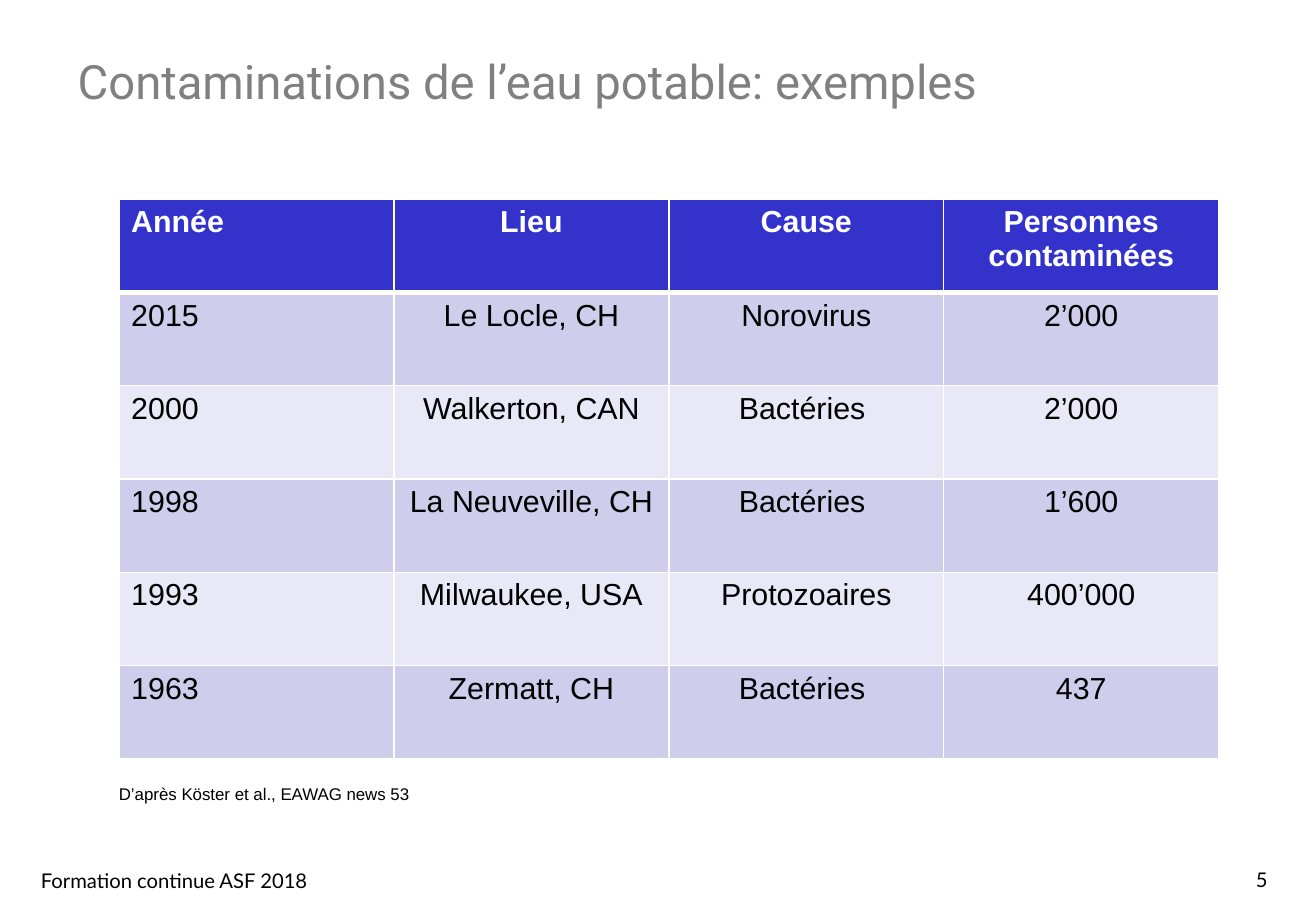
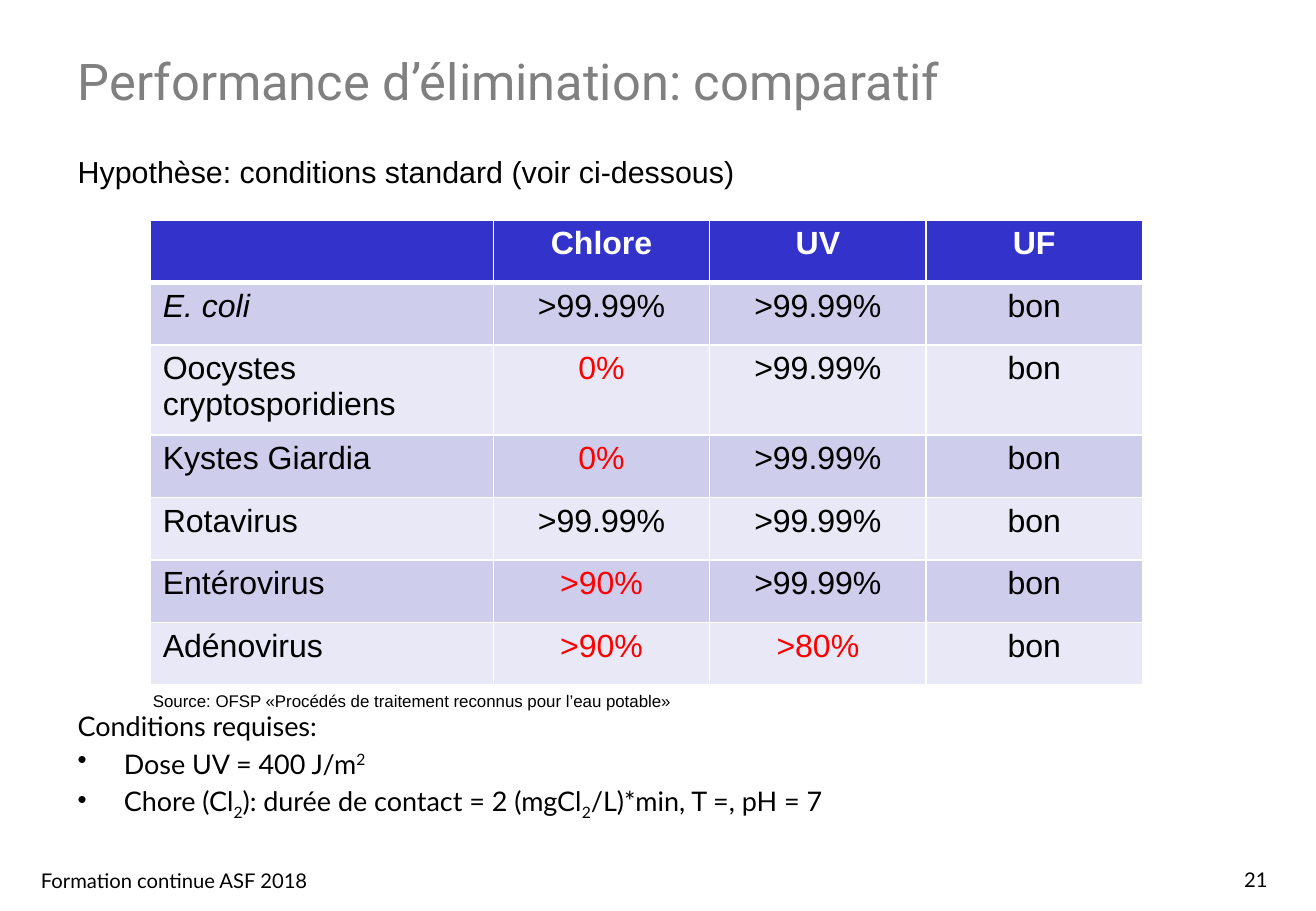
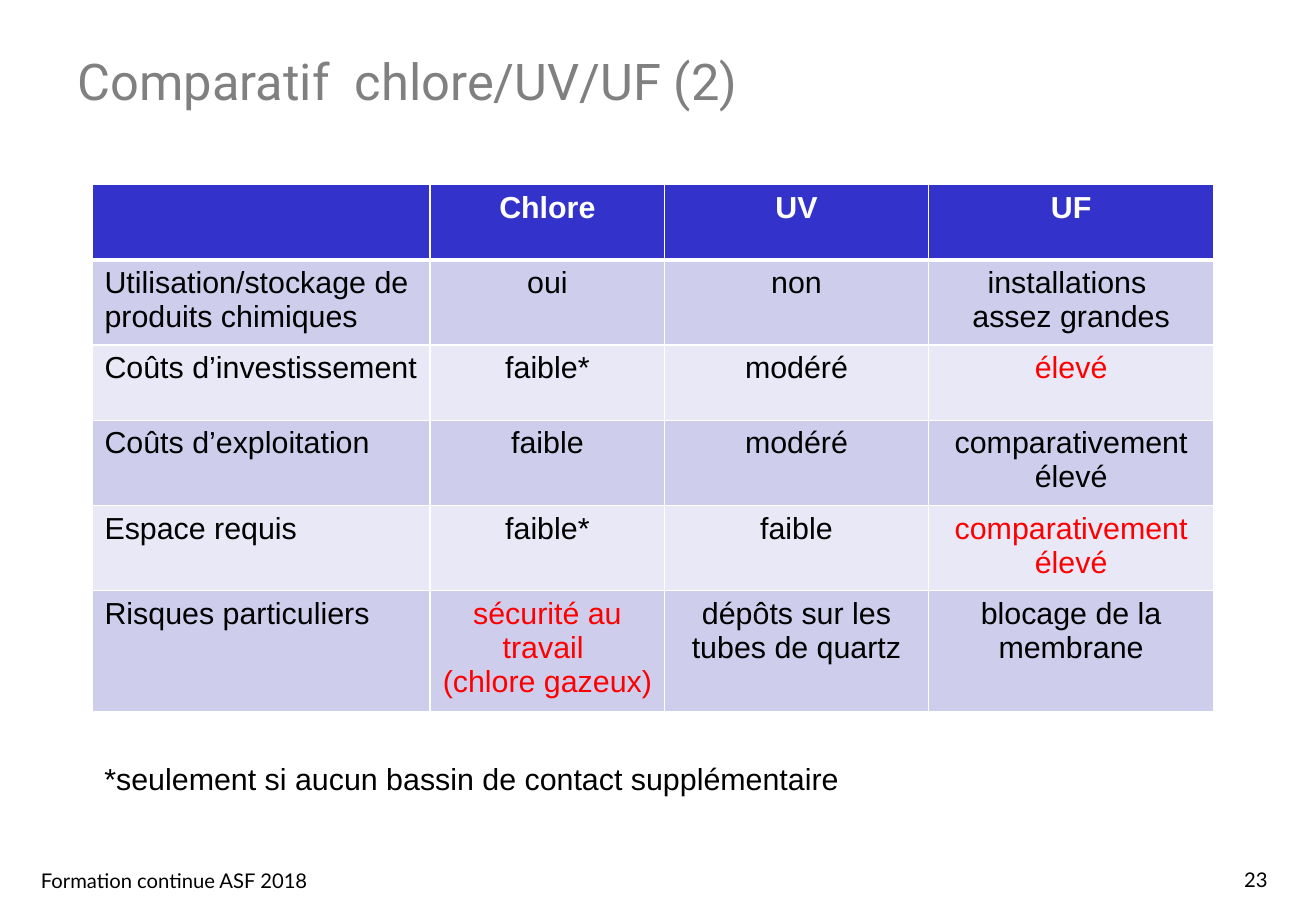
from typing import NamedTuple

from lxml import etree
from pptx import Presentation
from pptx import util as u
from pptx.dml.color import RGBColor
from pptx.enum import text
from pptx.oxml.ns import qn

# Shared look; all places are percentages of the slide's size
WIDE, HIGH = 10.83, 7.5
HUES = {"title": "808080", "head": "3333CC", "odd": "CECEEC", "even": "E8E8F6",
        "ink": "000000", "alert": "FF0000", "white": "FFFFFF"}
LEFT, MID, RIGHT = text.PP_ALIGN.LEFT, text.PP_ALIGN.CENTER, text.PP_ALIGN.RIGHT


class Box(NamedTuple):
    x: float
    y: float
    w: float
    h: float


class Font(NamedTuple):
    name: str
    size: float
    hue: str = "ink"
    bold: bool = False
    slant: bool = False


class Note(NamedTuple):
    words: str
    box: Box
    size: float


class Grid(NamedTuple):
    x: float
    y: float
    cols: list[float]
    rows: list[float]
    size: float
    data: list[list[str]]
    alert: set[tuple[int, int]] = set()
    slant: set[tuple[int, int]] = set()


class Page(NamedTuple):
    title: str
    size: float
    wide: float
    num: int
    grid: Grid
    notes: list[Note]


class Part(NamedTuple):
    words: str
    shift: int = 0


FOOT = Box(2.2, 94.67, 27, 4)
NUM = Box(76.36, 94.53, 20.87, 4.4)
BODY = Box(5, 77.2, 90, 16.13)
SMALL = Font("Lato", 12)

PAGES = [
    Page("Contaminations de l’eau potable: exemples", 28, 72.85, 5,
         Grid(9.05, 21.87, [20.89] * 4, [10.24] * 6, 18, [
             ["Année", "Lieu", "Cause", "Personnes contaminées"],
             ["2015", "Le Locle, CH", "Norovirus", "2’000"],
             ["2000", "Walkerton, CAN", "Bactéries ", "2’000"],
             ["1998", "La Neuveville, CH", "Bactéries ", "1’600"],
             ["1993", "Milwaukee, USA", "Protozoaires", "400’000"],
             ["1963", "Zermatt, CH", "Bactéries ", "437"]]),
         [Note("D’après Köster et al., EAWAG news 53",
               Box(8.13, 85.33, 24.9, 3.6), 10)]),
    Page("Performance d’élimination: comparatif", 30, 77.56, 21,
         Grid(11.45, 24.13, [26.04] + [16.44] * 3,
              [6.87] * 2 + [9.87] + [6.87] * 4, 19, [
             ["", "Chlore", "UV", "UF"],
             ["E. coli", ">99.99%", ">99.99%", "bon"],
             ["Oocystes cryptosporidiens", "0%", ">99.99%", "bon"],
             ["Kystes Giardia", "0%", ">99.99%", "bon"],
             ["Rotavirus", ">99.99%", ">99.99%", "bon"],
             ["Entérovirus", ">90%", ">99.99%", "bon"],
             ["Adénovirus", ">90%", ">80%", "bon"]],
              alert={(2, 1), (3, 1), (5, 1), (6, 1), (6, 2)}, slant={(1, 0)}),
         [Note("Hypothèse: conditions standard (voir ci-dessous)",
               Box(5, 16.13, 52.6, 5.33), 18),
          Note("Source: OFSP «Procédés de traitement reconnus pour l’eau potable»",
               Box(10.71, 75.2, 73.13, 3.6), 10)]),
    Page("Comparatif  chlore/UV/UF (2)", 30, 77.56, 23,
         Grid(7.02, 20.27, [25.67, 17.82, 20.04, 21.7],
              [8.27, 9.33, 8.27, 9.33, 9.33, 13.33], 18, [
             ["", "Chlore", "UV", "UF"],
             ["Utilisation/stockage de produits chimiques", "oui", "non",
              "installations \vassez grandes"],
             ["Coûts d’investissement", "faible*", "modéré", "élevé"],
             ["Coûts d’exploitation", "faible", "modéré", "comparativement élevé"],
             ["Espace requis", "faible*", "faible", "comparativement élevé"],
             ["Risques particuliers", "sécurité au travail \v(chlore gazeux)",
              "dépôts sur les tubes de quartz", "blocage de la membrane"]],
              alert={(2, 3), (4, 3), (5, 1)}),
         [Note("*seulement si aucun bassin de contact supplémentaire",
               Box(7.02, 82.8, 76.73, 5.33), 18)]),
]

NEEDS = [
    [Part("Conditions requises:")],
    [Part("Dose UV = 400 J/m"), Part("2", 30)],
    [Part("Chore (Cl"), Part("2", -25), Part("): durée de contact = 2 (mgCl"),
     Part("2", -25), Part("/L)*min, T =, pH = 7")],
]


def across(share: float) -> int:
    return u.Inches(WIDE * share / 100)


def down(share: float) -> int:
    return u.Inches(HIGH * share / 100)


def style(para, font: Font, align=LEFT) -> None:
    para.alignment = align
    for run in para.runs:
        face = run.font
        face.name, face.size = font.name, u.Pt(font.size)
        face.bold, face.italic = font.bold, font.slant
        face.color.rgb = RGBColor.from_string(HUES[font.hue])


def frame(slide, box: Box):
    shape = slide.shapes.add_textbox(across(box.x), down(box.y),
                                     across(box.w), down(box.h))
    shape.text_frame.word_wrap = True
    return shape.text_frame


def write(slide, words: str, box: Box, font: Font, align=LEFT):
    area = frame(slide, box)
    area.text = words
    style(area.paragraphs[0], font, align)
    return area


def edge(cell, side: str, width: float) -> None:
    props = cell._tc.get_or_add_tcPr()
    line = etree.SubElement(props, qn(f"a:ln{side}"), w=str(u.Pt(width)))
    fill = etree.SubElement(line, qn("a:solidFill"))
    etree.SubElement(fill, qn("a:srgbClr"), val=HUES["white"])


def draw_grid(slide, grid: Grid) -> None:
    table = slide.shapes.add_table(
        len(grid.rows), len(grid.cols), across(grid.x), down(grid.y),
        across(sum(grid.cols)), down(sum(grid.rows))).table
    for col, share in zip(table.columns, grid.cols):
        col.width = across(share)
    for row, share in zip(table.rows, grid.rows):
        row.height = down(share)
    for r, line in enumerate(grid.data):
        band = "head" if r == 0 else "odd" if r % 2 else "even"
        for c, words in enumerate(line):
            cell = table.cell(r, c)
            # A thick rule parts the header from the rows
            for side in "LRTB":
                thick = (r, side) in {(0, "B"), (1, "T")}
                edge(cell, side, 3 if thick else 1)
            cell.fill.solid()
            cell.fill.fore_color.rgb = RGBColor.from_string(HUES[band])
            cell.text_frame.text = words
            hue = ("white" if r == 0 else
                   "alert" if (r, c) in grid.alert else "ink")
            font = Font("Arial", grid.size, hue, r == 0, (r, c) in grid.slant)
            for para in cell.text_frame.paragraphs:
                style(para, font, MID if c else LEFT)


def draw_needs(slide) -> None:
    area = frame(slide, BODY)
    for i, parts in enumerate(NEEDS):
        para = area.add_paragraph() if i else area.paragraphs[0]
        if i:
            para.space_before = u.Pt(3.2)
            props = para._p.get_or_add_pPr()
            hang = u.Inches(0.38)
            props.set("marL", str(hang))
            props.set("indent", str(-hang))
            etree.SubElement(props, qn("a:buChar"), char="•")
        for part in parts:
            run = para.add_run()
            run.text = part.words
            if part.shift:
                run.font._element.set("baseline", str(part.shift * 1000))
        style(para, Font("Lato", 16))


def draw_page(deck, page: Page):
    slide = deck.slides.add_slide(deck.slide_layouts[6])
    # Footer, title and page number
    write(slide, "Formation continue ASF 2018", FOOT, SMALL)
    title = write(slide, page.title, Box(5, 4.93, page.wide, 7.87),
                  Font("Roboto", page.size, "title"))
    title.vertical_anchor = text.MSO_ANCHOR.MIDDLE
    write(slide, str(page.num), NUM, SMALL, RIGHT)
    # Table and notes
    draw_grid(slide, page.grid)
    for note in page.notes:
        write(slide, note.words, note.box, Font("Arial", note.size))
    return slide


def main() -> None:
    deck = Presentation()
    deck.slide_width, deck.slide_height = u.Inches(WIDE), u.Inches(HIGH)
    slides = [draw_page(deck, page) for page in PAGES]
    draw_needs(slides[1])
    deck.save("out.pptx")


if __name__ == "__main__":
    main()
